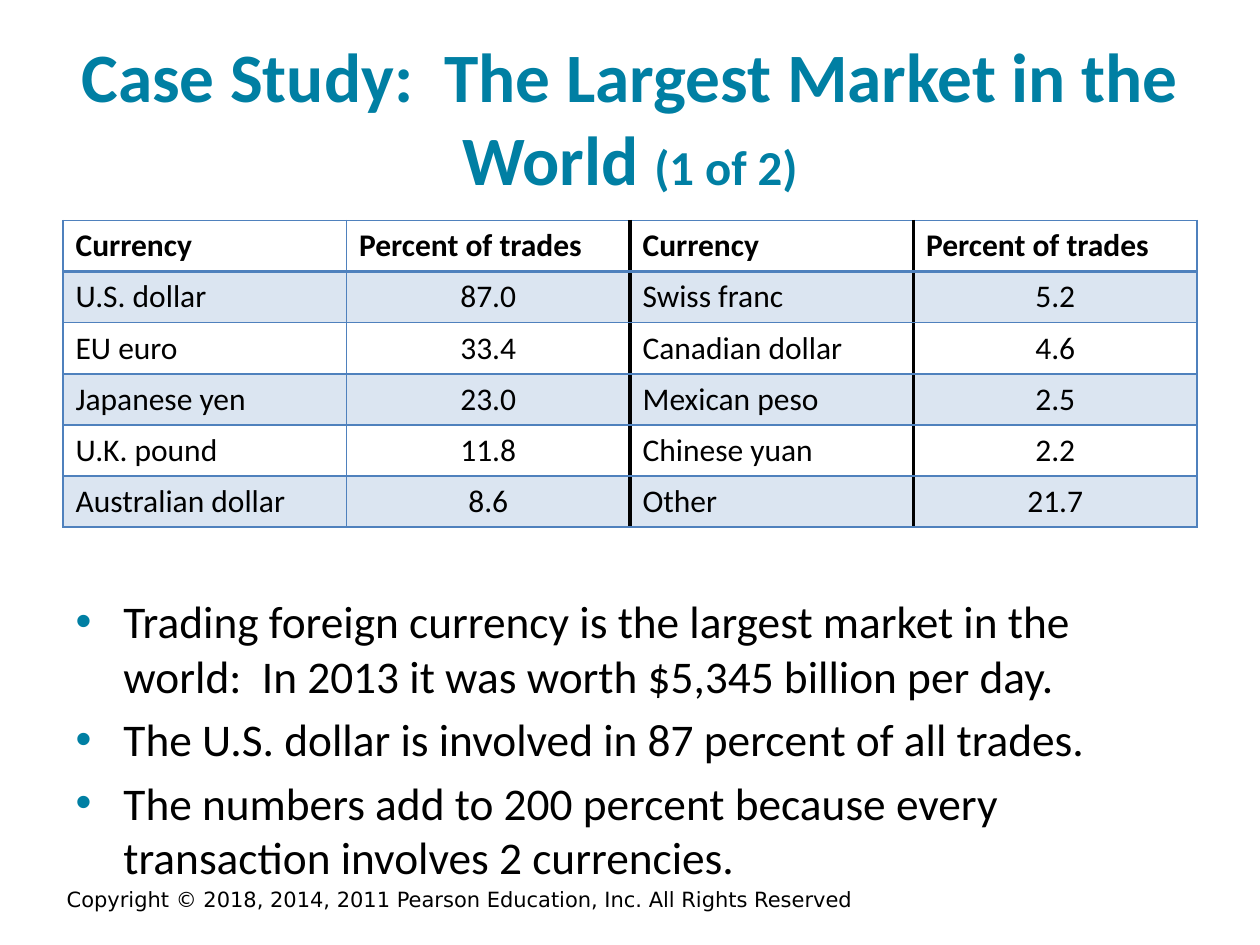
"""Build the currency market case study slide."""
from dataclasses import dataclass
from typing import Any, NamedTuple

from pptx import Presentation
from pptx.dml.color import RGBColor
from pptx.enum.text import MSO_ANCHOR, MSO_AUTO_SIZE, PP_ALIGN
from pptx.oxml.ns import qn
from pptx.oxml.xmlchemy import OxmlElement
from pptx.util import Inches, Pt

LEFT, CENTER = PP_ALIGN.LEFT, PP_ALIGN.CENTER
TOP, MIDDLE = MSO_ANCHOR.TOP, MSO_ANCHOR.MIDDLE
NO_AUTOFIT = MSO_AUTO_SIZE.NONE


@dataclass(frozen=True)
class Theme:
    font: str = "Calibri"
    footer_font: str = "DejaVu Sans"
    accent: str = "007FA3"
    table: str = "4F81BD"
    text: str = "000000"
    band_alpha: int = 20
    title_size: float = 39.6
    part_size: float = 27.9
    body_size: float = 25.9
    table_size: float = 18
    footer_size: float = 12
    thin: float = 1
    medium: float = 2
    thick: float = 2.25


class Box(NamedTuple):
    left: float
    top: float
    width: float
    height: float


class Share(NamedTuple):
    currency: str
    percent: str


THEME = Theme()
TITLE_BOX = Box(0.5, 0.3, 9, 1.25)
TABLE_BOX = Box(0.5, 1.75, 9, 2.43)
BODY_BOX = Box(0.5, 4.66, 9, 2.04)
FOOTER_BOX = Box(-0.14, 6.99, 7.58, 0.36)
HEADER = Share("Currency", "Percent of trades")
SHARES = [
    Share("U.S. dollar", "87.0"), Share("EU euro", "33.4"),
    Share("Japanese yen", "23.0"), Share("U.K. pound", "11.8"),
    Share("Australian dollar", "8.6"), Share("Swiss franc", "5.2"),
    Share("Canadian dollar", "4.6"), Share("Mexican peso", "2.5"),
    Share("Chinese yuan", "2.2"), Share("Other", "21.7"),
]
POINTS = [
    "Trading foreign currency is the largest market in the world:  "
    "In 2013 it was worth $5,345 billion per day.",
    "The U.S. dollar is involved in 87 percent of all trades.",
    "The numbers add to 200 percent because every transaction involves 2 currencies.",
]
COPYRIGHT = "Copyright © 2018, 2014, 2011 Pearson Education, Inc. All Rights Reserved"


def add_run(p: Any, text: str, size: float, color: str = THEME.text,
            bold: bool = False, font: str = THEME.font) -> None:
    """Add one formatted run to a paragraph."""
    r = p.add_run()
    r.text = text
    r.font.name, r.font.size, r.font.bold = font, Pt(size), bold
    r.font.color.rgb = RGBColor.from_string(color)


def place(sp: Any, box: Box, anchor: Any) -> Any:
    """Move a text shape and return its text frame."""
    sp.left, sp.top, sp.width, sp.height = map(Inches, box)
    tf = sp.text_frame
    tf.word_wrap, tf.auto_size, tf.vertical_anchor = True, NO_AUTOFIT, anchor
    return tf


def add_child(parent: Any, tag: str, **attrs: str) -> Any:
    """Append an XML element with attributes and return it."""
    child = OxmlElement(tag)
    for name, value in attrs.items():
        child.set(name, value)
    parent.append(child)
    return child


def add_bullet(p: Any) -> None:
    """Give a paragraph a coloured hanging bullet."""
    pPr = p._p.get_or_add_pPr()
    pPr.set("marL", str(Inches(0.38)))
    pPr.set("indent", str(-Inches(0.38)))
    add_child(add_child(pPr, "a:buClr"), "a:srgbClr", val=THEME.accent)
    add_child(pPr, "a:buFont", typeface="Arial")
    add_child(pPr, "a:buChar", char="•")


def add_border(cell: Any, side: str, color: str, width: float) -> None:
    """Draw one border of a table cell."""
    ln = add_child(cell._tc.get_or_add_tcPr(), f"a:ln{side}", w=str(Pt(width)))
    add_child(add_child(ln, "a:solidFill"), "a:srgbClr", val=color)


def format_cell(cell: Any, row: int, col: int) -> None:
    """Set the borders and the band fill of a table cell."""
    thin, divider = (THEME.table, THEME.thin), (THEME.text, THEME.thick)
    rule = (THEME.table, THEME.medium)
    add_border(cell, "L", *(divider if col >= 2 else thin))
    add_border(cell, "R", *(divider if col in (1, 2) else thin))
    add_border(cell, "T", *(rule if row == 1 else thin))
    add_border(cell, "B", *(rule if row == 0 else thin))
    if row % 2:
        cell.fill.solid()
        cell.fill.fore_color.rgb = RGBColor.from_string(THEME.table)
        color = cell._tc.tcPr.find(qn("a:solidFill"))[0]
        add_child(color, "a:alpha", val=str(THEME.band_alpha * 1000))
    else:
        cell.fill.background()


def add_share_table(s: Any) -> None:
    """Add the currency shares as two side-by-side column pairs."""
    half = len(SHARES) // 2
    rows = [HEADER + HEADER]
    rows += [a + b for a, b in zip(SHARES[:half], SHARES[half:])]
    table = s.shapes.add_table(len(rows), 4, *map(Inches, TABLE_BOX)).table
    table.horz_banding = False
    for i, row in enumerate(rows):
        for j, text in enumerate(row):
            cell = table.cell(i, j)
            format_cell(cell, i, j)
            p = cell.text_frame.paragraphs[0]
            p.alignment = CENTER if i and j % 2 else LEFT
            add_run(p, text, THEME.table_size, bold=i == 0)


def add_title(s: Any) -> None:
    """Fill the title placeholder."""
    p = place(s.shapes.title, TITLE_BOX, MIDDLE).paragraphs[0]
    p.alignment = CENTER
    add_run(p, "Case Study:  The Largest Market in the World ",
            THEME.title_size, THEME.accent, True)
    add_run(p, "(1 of 2)", THEME.part_size, THEME.accent, True)


def add_points(s: Any) -> None:
    """Fill the body placeholder with bullets."""
    tf = place(s.placeholders[1], BODY_BOX, TOP)
    for i, text in enumerate(POINTS):
        p = tf.add_paragraph() if i else tf.paragraphs[0]
        add_bullet(p)
        p.space_before = Pt(THEME.body_size * 0.2 if i else 0)
        add_run(p, text, THEME.body_size)


def add_footer(s: Any) -> None:
    """Add the copyright line."""
    sp = s.shapes.add_textbox(*map(Inches, FOOTER_BOX))
    p = place(sp, FOOTER_BOX, TOP).paragraphs[0]
    p.alignment = CENTER
    add_run(p, COPYRIGHT, THEME.footer_size, font=THEME.footer_font)


def main() -> None:
    """Build and save the presentation."""
    prs = Presentation()
    prs.slide_width, prs.slide_height = Inches(10), Inches(7.5)
    s = prs.slides.add_slide(prs.slide_layouts[1])
    add_footer(s)
    add_title(s)
    add_share_table(s)
    add_points(s)
    prs.save("out.pptx")


if __name__ == "__main__":
    main()
